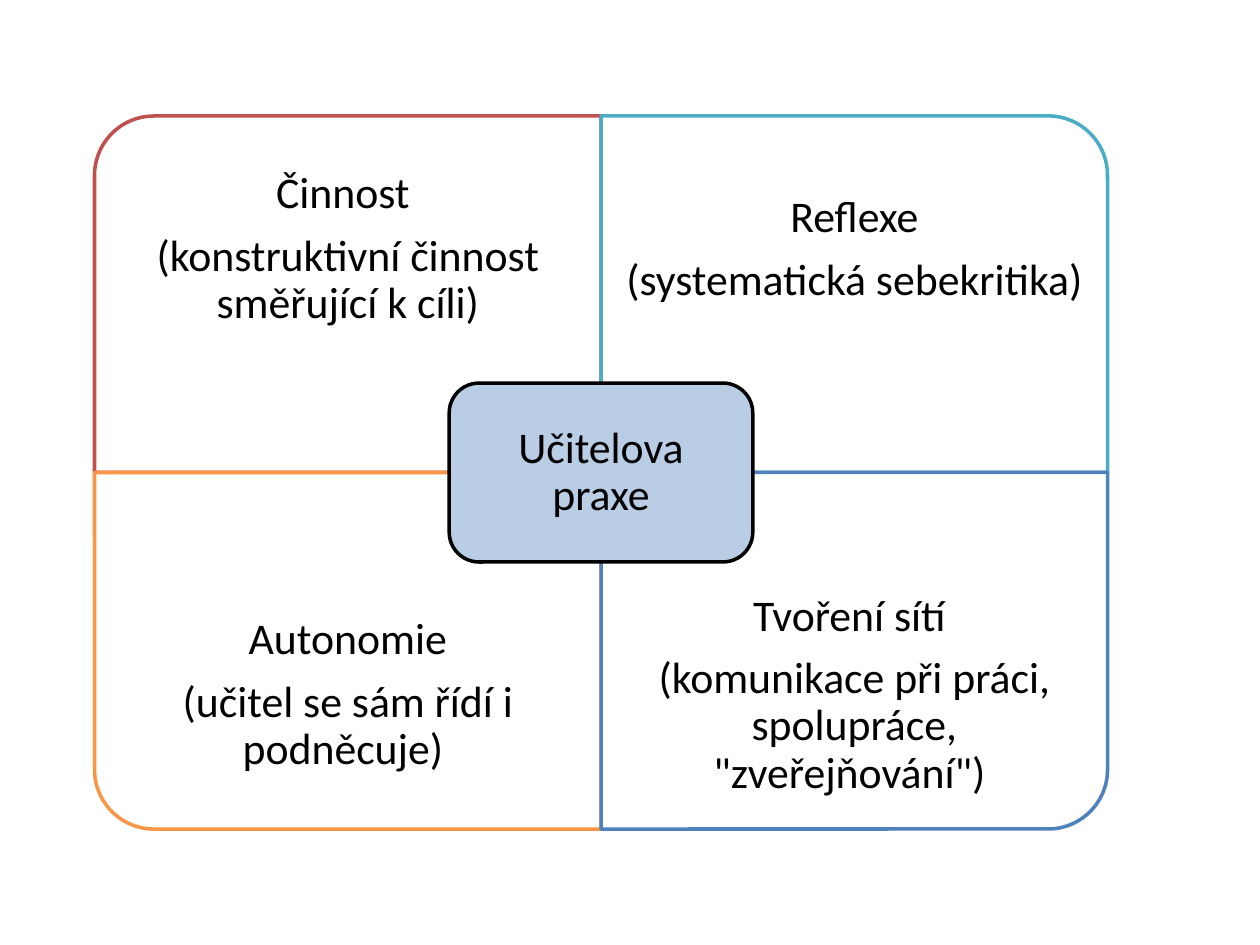
from pptx import Presentation
from pptx.dml.color import RGBColor
from pptx.enum.shapes import MSO_SHAPE
from pptx.enum.text import MSO_ANCHOR, PP_ALIGN
from pptx.util import Inches, Pt

ROUND_ONE = MSO_SHAPE.ROUND_1_RECTANGLE
ROUND_ALL = MSO_SHAPE.ROUNDED_RECTANGLE
CENTER = PP_ALIGN.CENTER
MIDDLE = MSO_ANCHOR.MIDDLE

WHITE = RGBColor(0xFF, 0xFF, 0xFF)
BLACK = RGBColor(0x00, 0x00, 0x00)
RED = RGBColor(0xC0, 0x50, 0x4D)
TEAL = RGBColor(0x4B, 0xAC, 0xC6)
ORANGE = RGBColor(0xF7, 0x96, 0x46)
BLUE = RGBColor(0x4F, 0x81, 0xBD)
PALE_BLUE = RGBColor(0xB9, 0xCD, 0xE5)

LEFT, TOP = 0.75, 0.92
QUAD_W, QUAD_H = 4.02, 2.83
LABEL_H = QUAD_H * 0.75
CORE_W, CORE_H = 2.41, 1.42

# column, row, rotation that turns the round corner outwards, outline, text
QUADRANTS = [
    (0, 0, 270, RED, ["Činnost ", "(konstruktivní činnost směřující k cíli)"]),
    (1, 0, 0, TEAL, ["Reflexe", "(systematická sebekritika) "]),
    (0, 1, 180, ORANGE, ["Autonomie", "(učitel se sám řídí i podněcuje) "]),
    (1, 1, 90, BLUE,
     ["Tvoření sítí ", '(komunikace při práci, spolupráce, "zveřejňování") ']),
]


def add_panel(slide, preset, center_x, center_y, width, height, fill, outline):
    panel = slide.shapes.add_shape(
        preset, Inches(center_x - width / 2), Inches(center_y - height / 2),
        Inches(width), Inches(height))
    panel.shadow.inherit = False
    panel.fill.solid()
    panel.fill.fore_color.rgb = fill
    panel.line.color.rgb = outline
    panel.line.width = Pt(2)
    return panel


def write_text(frame, lines, inset):
    frame.word_wrap = True
    frame.vertical_anchor = MIDDLE
    frame.margin_left = frame.margin_right = Inches(inset)
    frame.margin_top = frame.margin_bottom = Inches(inset)
    for index, line in enumerate(lines):
        paragraph = frame.add_paragraph() if index else frame.paragraphs[0]
        paragraph.text = line
        paragraph.alignment = CENTER
        paragraph.line_spacing = 0.9
        paragraph.space_after = Pt(8.75)
        paragraph.font.name = "Calibri"
        paragraph.font.size = Pt(25)
        paragraph.font.color.rgb = BLACK


def add_quadrant(slide, column, row, rotation, outline, lines):
    """Draw one quarter; its text sits upright in the three quarters away from the core."""
    x, y = LEFT + column * QUAD_W, TOP + row * QUAD_H
    sideways = rotation in (90, 270)
    width, height = (QUAD_H, QUAD_W) if sideways else (QUAD_W, QUAD_H)
    panel = add_panel(slide, ROUND_ONE, x + QUAD_W / 2, y + QUAD_H / 2,
                      width, height, WHITE, outline)
    panel.rotation = rotation
    label_top = y + row * (QUAD_H - LABEL_H)
    label = slide.shapes.add_textbox(
        Inches(x), Inches(label_top), Inches(QUAD_W), Inches(LABEL_H))
    write_text(label.text_frame, lines, 0.19)


def add_core(slide):
    core = add_panel(slide, ROUND_ALL, LEFT + QUAD_W, TOP + QUAD_H,
                     CORE_W, CORE_H, PALE_BLUE, BLACK)
    write_text(core.text_frame, ["Učitelova praxe"], 0.1)


def main():
    presentation = Presentation()
    presentation.slide_width = Inches(10)
    presentation.slide_height = Inches(7.5)
    slide = presentation.slides.add_slide(presentation.slide_layouts[6])
    for quadrant in QUADRANTS:
        add_quadrant(slide, *quadrant)
    add_core(slide)
    presentation.save("out.pptx")


if __name__ == "__main__":
    main()
